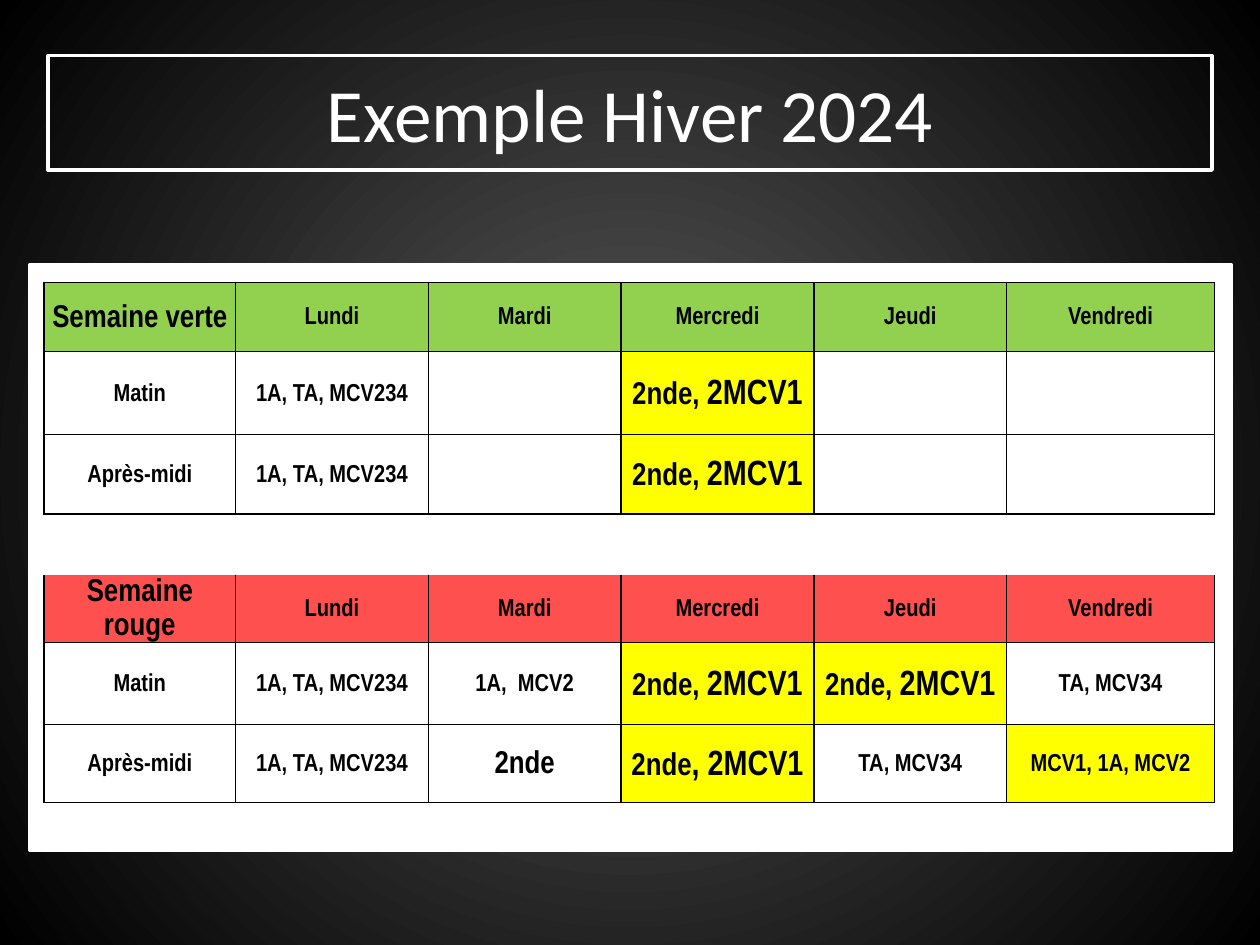
"""Build the slide showing the winter 2024 timetable for green and red weeks."""
from dataclasses import dataclass

from lxml.etree import SubElement
from pptx import Presentation
from pptx.dml.color import RGBColor
from pptx.enum.shapes import MSO_SHAPE
from pptx.enum.text import MSO_ANCHOR, PP_ALIGN
from pptx.oxml.ns import qn
from pptx.util import Inches, Pt


@dataclass(frozen=True)
class Theme:
    white: RGBColor = RGBColor.from_string("FFFFFF")
    black: RGBColor = RGBColor.from_string("000000")
    glow: RGBColor = RGBColor.from_string("595959")
    green: RGBColor = RGBColor.from_string("92D050")
    red: RGBColor = RGBColor.from_string("FF5050")
    yellow: RGBColor = RGBColor.from_string("FFFF00")
    title_font: str = "Calibri"
    table_font: str = "Arial Narrow"
    title_size: Pt = Pt(43)
    body_size: Pt = Pt(14)
    large_size: Pt = Pt(18)
    group_size: Pt = Pt(20)
    line_width: Pt = Pt(2)
    border_width: Pt = Pt(1)


def set_borders(cell, drawn_sides):
    properties = cell._tc.get_or_add_tcPr()
    for side in "LRTB":
        line = SubElement(properties, qn(f"a:ln{side}"), w=str(theme.border_width))
        if side in drawn_sides:
            fill = SubElement(line, qn("a:solidFill"))
            SubElement(fill, qn("a:srgbClr"), val=str(theme.black))
        else:
            SubElement(line, qn("a:noFill"))


theme = Theme()
deck = Presentation()
deck.slide_width, deck.slide_height = Inches(10), Inches(7.5)
page = deck.slides.add_slide(deck.slide_layouts[5])

background = page.background.fill
background.gradient()
for stop, color in zip(background.gradient_stops, (theme.glow, theme.black)):
    stop.color.rgb = color
gradient = page.element.find(".//" + qn("a:gradFill"))
gradient.remove(gradient.find(qn("a:lin")))
circle = SubElement(gradient, qn("a:path"), path="circle")
SubElement(circle, qn("a:fillToRect"), {side: "50000" for side in "ltrb"})

title = page.shapes.title
title.left, title.top = Inches(0.38), Inches(0.44)
title.width, title.height = Inches(9.24), Inches(0.91)
title.line.color.rgb = theme.white
title.line.width = theme.line_width
title.text_frame.text = "Exemple Hiver 2024"
title.text_frame.vertical_anchor = MSO_ANCHOR.MIDDLE
heading = title.text_frame.paragraphs[0]
heading.alignment = PP_ALIGN.CENTER
heading.font.name = theme.title_font
heading.font.size = theme.title_size
heading.font.color.rgb = theme.white

panel = page.shapes.add_shape(
    MSO_SHAPE.RECTANGLE, Inches(0.24), Inches(2.1), Inches(9.53), Inches(4.65))
panel.shadow.inherit = False
panel.fill.solid()
panel.fill.fore_color.rgb = theme.white
panel.line.color.rgb = theme.white
panel.line.width = theme.line_width

days = ["Lundi", "Mardi", "Mercredi", "Jeudi", "Vendredi"]
monday = "1A, TA, MCV234"
second_year = ("2nde, ", "2MCV1")
timetable = [
    ["Semaine verte", *days],
    ["Matin", monday, "", second_year, "", ""],
    ["Après-midi", monday, "", second_year, "", ""],
    [""] * 6,
    ["Semaine rouge", *days],
    ["Matin", monday, "1A,  MCV2", second_year, second_year, "TA, MCV34"],
    ["Après-midi", monday, "2nde", ("2nde", ", 2MCV1"), "TA, MCV34", "MCV1, 1A, MCV2"],
]
column_widths = [1.52, 1.53, 1.53, 1.53, 1.53, 1.65]
row_heights = [0.55, 0.66, 0.63, 0.48, 0.43, 0.65, 0.62]
header_colors = {0: theme.green, 4: theme.red}
border_sides = {3: "T", 4: "LRB"}
large_labels = {"Semaine verte", "Semaine rouge", "2nde"}
highlighted = {second_year, ("2nde", ", 2MCV1"), "MCV1, 1A, MCV2"}

table = page.shapes.add_table(
    len(row_heights), len(column_widths), Inches(0.35), Inches(2.24),
    Inches(sum(column_widths)), Inches(sum(row_heights))).table
table.first_row = False
table.horz_banding = False
for column, width in zip(table.columns, column_widths):
    column.width = Inches(width)

for row_index, entries in enumerate(timetable):
    table.rows[row_index].height = Inches(row_heights[row_index])
    for column_index, entry in enumerate(entries):
        cell = table.cell(row_index, column_index)
        set_borders(cell, border_sides.get(row_index, "LRTB"))
        fill_color = theme.yellow if entry in highlighted else header_colors.get(row_index)
        if fill_color is None:
            cell.fill.background()
        else:
            cell.fill.solid()
            cell.fill.fore_color.rgb = fill_color
        if not entry:
            continue
        cell.vertical_anchor = MSO_ANCHOR.MIDDLE
        cell.margin_left = cell.margin_right = Inches(0.04)
        cell.margin_top = cell.margin_bottom = 0
        para = cell.text_frame.paragraphs[0]
        para.alignment = PP_ALIGN.CENTER
        para.line_spacing = 1.15
        para.space_after = Pt(10)
        para.font.name = theme.table_font
        para.font.bold = True
        para.font.color.rgb = theme.black
        if isinstance(entry, tuple):
            for text, size in zip(entry, (theme.large_size, theme.group_size)):
                span = para.add_run()
                span.text = text
                span.font.size = size
        else:
            para.add_run().text = entry
            para.font.size = theme.large_size if entry in large_labels else theme.body_size

deck.save("out.pptx")
